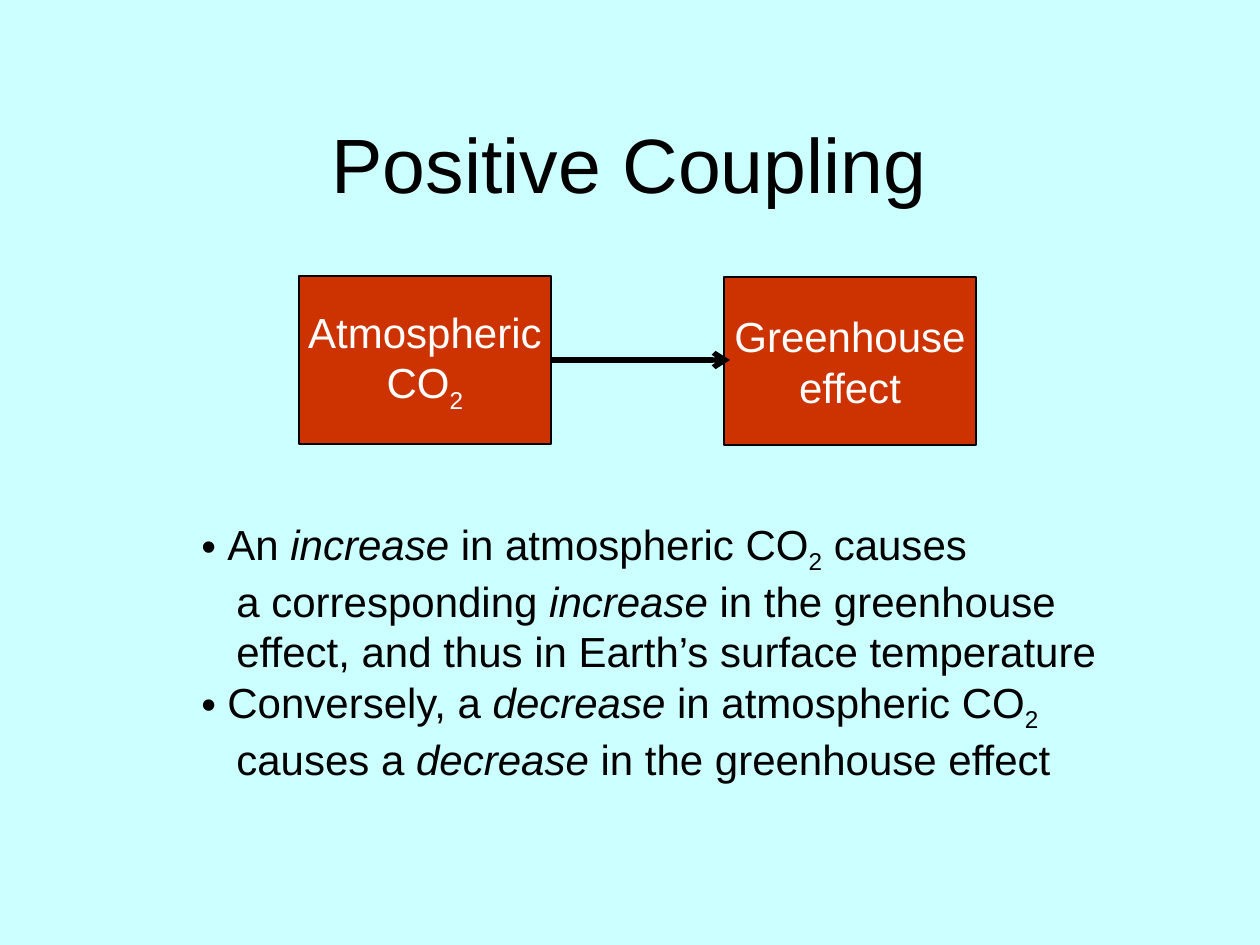
from typing import NamedTuple

from lxml import etree
from pptx import Presentation
from pptx.dml.color import RGBColor
from pptx.enum.shapes import MSO_CONNECTOR, MSO_SHAPE
from pptx.enum.text import MSO_ANCHOR, PP_ALIGN
from pptx.oxml.ns import qn
from pptx.util import Emu, Pt

SCALE = 914400 / 126
SKY = RGBColor(0xCC, 0xFF, 0xFF)
RUST = RGBColor(0xCC, 0x33, 0x00)
BLACK = RGBColor(0, 0, 0)
WHITE = RGBColor(0xFF, 0xFF, 0xFF)
CENTER, LEFT = PP_ALIGN.CENTER, PP_ALIGN.LEFT
MIDDLE, TOP = MSO_ANCHOR.MIDDLE, MSO_ANCHOR.TOP
RECT, STRAIGHT = MSO_SHAPE.RECTANGLE, MSO_CONNECTOR.STRAIGHT
FONT = "Arial"
RIGHT_SIDE = 3
HANG, INSET = 26, 35


class Bit(NamedTuple):
    text: str
    italic: bool = False
    sub: bool = False


class Line(NamedTuple):
    bits: list[Bit]
    bullet: bool = False


class Box(NamedTuple):
    left: int
    top: int
    lines: list[Line]


TWO = Bit("2", sub=True)
MORE, LESS = Bit("increase ", italic=True), Bit("decrease ", italic=True)
CARBON = Bit("in atmospheric CO")

TITLE = [Line([Bit("Positive Coupling")])]
CAUSE = Box(299, 276, [Line([Bit("Atmospheric")]), Line([Bit("CO"), TWO])])
EFFECT = Box(724, 277, [Line([Bit("Greenhouse")]), Line([Bit("effect")])])
NOTES = [
    Line([Bit("An "), MORE, CARBON, TWO, Bit(" causes")], bullet=True),
    Line([Bit("a corresponding "), MORE, Bit("in the greenhouse")]),
    Line([Bit("effect, and thus in Earth’s surface temperature")]),
    Line([Bit("Conversely, a "), LESS, CARBON, TWO], bullet=True),
    Line([Bit("causes a "), LESS, Bit("in the greenhouse effect")]),
]


def px(count: int) -> Emu:
    return Emu(round(count * SCALE))


def write(frame, lines: list[Line], size: int, color: RGBColor,
          align=CENTER, anchor=MIDDLE) -> None:
    frame.word_wrap = False
    frame.vertical_anchor = anchor
    for i, line in enumerate(lines):
        para = frame.add_paragraph() if i else frame.paragraphs[0]
        para.alignment = align
        for bit in line.bits:
            run = para.add_run()
            run.text = bit.text
            font = run.font
            font.name, font.size, font.italic = FONT, Pt(size), bit.italic
            font.color.rgb = color
            if bit.sub:
                run._r.get_or_add_rPr().set("baseline", "-25000")


def indent(frame, lines: list[Line]) -> None:
    """Hang the bulleted lines and inset the lines that carry on."""
    for para, line in zip(frame.paragraphs, lines):
        props = para._p.get_or_add_pPr()
        props.set("marL", str(px(HANG if line.bullet else INSET)))
        props.set("indent", str(px(-HANG if line.bullet else 0)))
        if line.bullet:
            etree.SubElement(props, qn("a:buFont")).set("typeface", FONT)
            etree.SubElement(props, qn("a:buChar")).set("char", "•")


def draw_text(slide, left: int, top: int, width: int, height: int):
    return slide.shapes.add_textbox(
        px(left), px(top), px(width), px(height)).text_frame


def draw_box(slide, box: Box):
    shape = slide.shapes.add_shape(
        RECT, px(box.left), px(box.top), px(252), px(168))
    shape.shadow.inherit = False
    shape.fill.solid()
    shape.fill.fore_color.rgb = RUST
    shape.line.color.rgb = BLACK
    shape.line.width = Pt(0.75)
    write(shape.text_frame, box.lines, 24, WHITE)
    return shape


def draw_arrow(slide, start, x: int, y: int) -> None:
    """Point from the right side of the start shape to x, y."""
    arrow = slide.shapes.add_connector(STRAIGHT, px(x), px(y), px(x), px(y))
    arrow.begin_connect(start, RIGHT_SIDE)
    arrow.line.color.rgb = BLACK
    arrow.line.width = Pt(3)
    etree.SubElement(arrow.line._get_or_add_ln(),
                     qn("a:tailEnd")).set("type", "arrow")
    etree.SubElement(arrow._element.spPr, qn("a:effectLst"))


def main() -> None:
    deck = Presentation()
    deck.slide_width, deck.slide_height = px(1260), px(945)
    slide = deck.slides.add_slide(deck.slide_layouts[6])
    slide.background.fill.solid()
    slide.background.fill.fore_color.rgb = SKY

    write(draw_text(slide, 94, 84, 1071, 158), TITLE, 44, BLACK)
    cause = draw_box(slide, CAUSE)
    draw_box(slide, EFFECT)
    draw_arrow(slide, cause, 730, 360)
    notes = draw_text(slide, 189, 512, 921, 265)
    write(notes, NOTES, 24, BLACK, LEFT, TOP)
    indent(notes, NOTES)
    deck.save("out.pptx")


if __name__ == "__main__":
    main()
